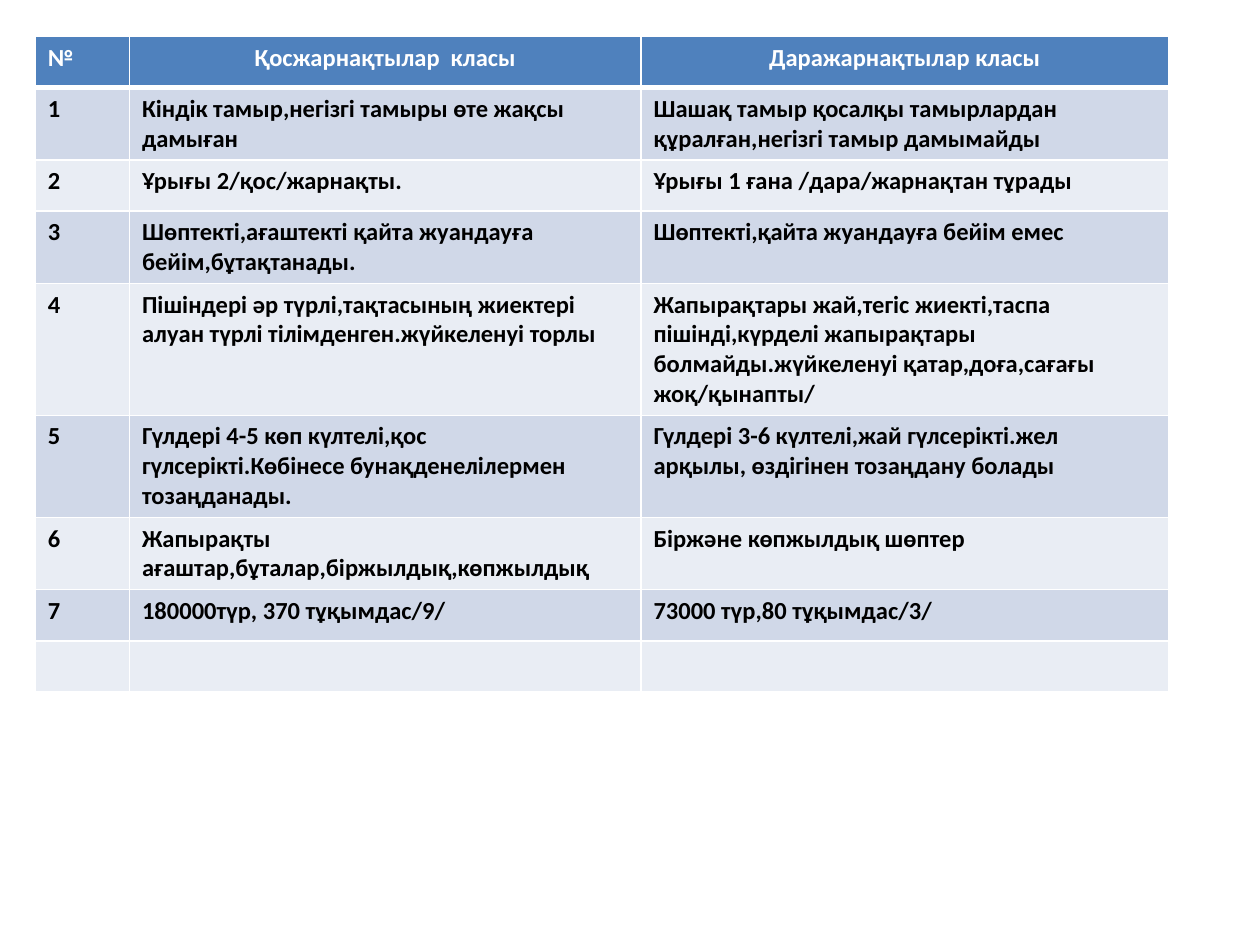
from lxml import etree
from pptx import Presentation
from pptx.dml.color import RGBColor
from pptx.enum.text import PP_ALIGN
from pptx.oxml.ns import qn
from pptx.util import Cm, Pt

LEFT, CENTER = PP_ALIGN.LEFT, PP_ALIGN.CENTER
WHITE = RGBColor(0xFF, 0xFF, 0xFF)
BLACK = RGBColor(0x00, 0x00, 0x00)
HEADER_BLUE = RGBColor(0x4F, 0x81, 0xBD)
BANDS = (RGBColor(0xD0, 0xD8, 0xE8), RGBColor(0xE9, 0xED, 0xF4))

COLUMN_WIDTHS = (1.9, 10.31, 10.64)
ROW_HEIGHT = 1.03
HEADER = ("№", "Қосжарнақтылар  класы", "Даражарнақтылар класы")
COMPARISONS = (
    ("Кіндік тамыр,негізгі тамыры өте жақсы дамыған",
     "Шашақ тамыр қосалқы тамырлардан құралған,негізгі тамыр дамымайды"),
    ("Ұрығы 2/қос/жарнақты.",
     "Ұрығы 1 ғана /дара/жарнақтан тұрады"),
    ("Шөптекті,ағаштекті қайта жуандауға бейім,бұтақтанады.",
     "Шөптекті,қайта жуандауға бейім емес"),
    ("Пішіндері әр түрлі,тақтасының жиектері алуан түрлі тілімденген.жүйкеленуі торлы",
     "Жапырақтары жай,тегіс жиекті,таспа пішінді,күрделі жапырақтары "
     "болмайды.жүйкеленуі қатар,доға,сағағы жоқ/қынапты/"),
    ("Гүлдері 4-5 көп күлтелі,қос гүлсерікті.Көбінесе бунақденелілермен тозаңданады.",
     "Гүлдері 3-6 күлтелі,жай гүлсерікті.жел арқылы, өздігінен тозаңдану болады"),
    ("Жапырақты ағаштар,бұталар,біржылдық,көпжылдық",
     "Біржәне көпжылдық шөптер"),
    ("180000түр, 370 тұқымдас/9/",
     "73000 түр,80 тұқымдас/3/"),
)


class SlideBuilder:
    font_format = {"name": "Calibri", "size": Pt(14), "bold": True}
    thin, thick = Pt(1), Pt(3)

    def __init__(self, slide):
        self.slide = slide

    def table(self, left, top, widths, row_height, rows):
        frame = self.slide.shapes.add_table(
            len(rows), len(widths), Cm(left), Cm(top),
            Cm(sum(widths)), Cm(row_height * len(rows)))
        table = frame.table
        for column, width in zip(table.columns, widths):
            column.width = Cm(width)
        for row_index, texts in enumerate(rows):
            table.rows[row_index].height = Cm(row_height)
            for column_index, text in enumerate(texts):
                cell = table.cell(row_index, column_index)
                self.borders(cell, row_index)
                self.cell(cell, text, row_index, column_index)

    def borders(self, cell, row_index):
        widths = {
            "a:lnL": self.thin,
            "a:lnR": self.thin,
            "a:lnT": self.thick if row_index == 1 else self.thin,
            "a:lnB": self.thick if row_index == 0 else self.thin,
        }
        properties = cell._tc.get_or_add_tcPr()
        for tag, width in widths.items():
            line = etree.SubElement(properties, qn(tag), w=str(int(width)))
            fill = etree.SubElement(line, qn("a:solidFill"))
            etree.SubElement(fill, qn("a:srgbClr"), val=str(WHITE))

    def cell(self, cell, text, row_index, column_index):
        is_header = row_index == 0
        cell.fill.solid()
        cell.fill.fore_color.rgb = HEADER_BLUE if is_header else BANDS[(row_index - 1) % 2]
        if not text:
            return
        paragraph = cell.text_frame.paragraphs[0]
        paragraph.alignment = CENTER if is_header and column_index > 0 else LEFT
        run = paragraph.add_run()
        run.text = text
        for name, value in self.font_format.items():
            setattr(run.font, name, value)
        run.font.color.rgb = WHITE if is_header else BLACK


def main():
    presentation = Presentation()
    presentation.slide_width, presentation.slide_height = Cm(25.4), Cm(19.05)
    slide = presentation.slides.add_slide(presentation.slide_layouts[6])
    numbered = [(str(number), *pair) for number, pair in enumerate(COMPARISONS, 1)]
    rows = [HEADER, *numbered, ("", "", "")]
    SlideBuilder(slide).table(0.71, 0.74, COLUMN_WIDTHS, ROW_HEIGHT, rows)
    presentation.save("out.pptx")


if __name__ == "__main__":
    main()
